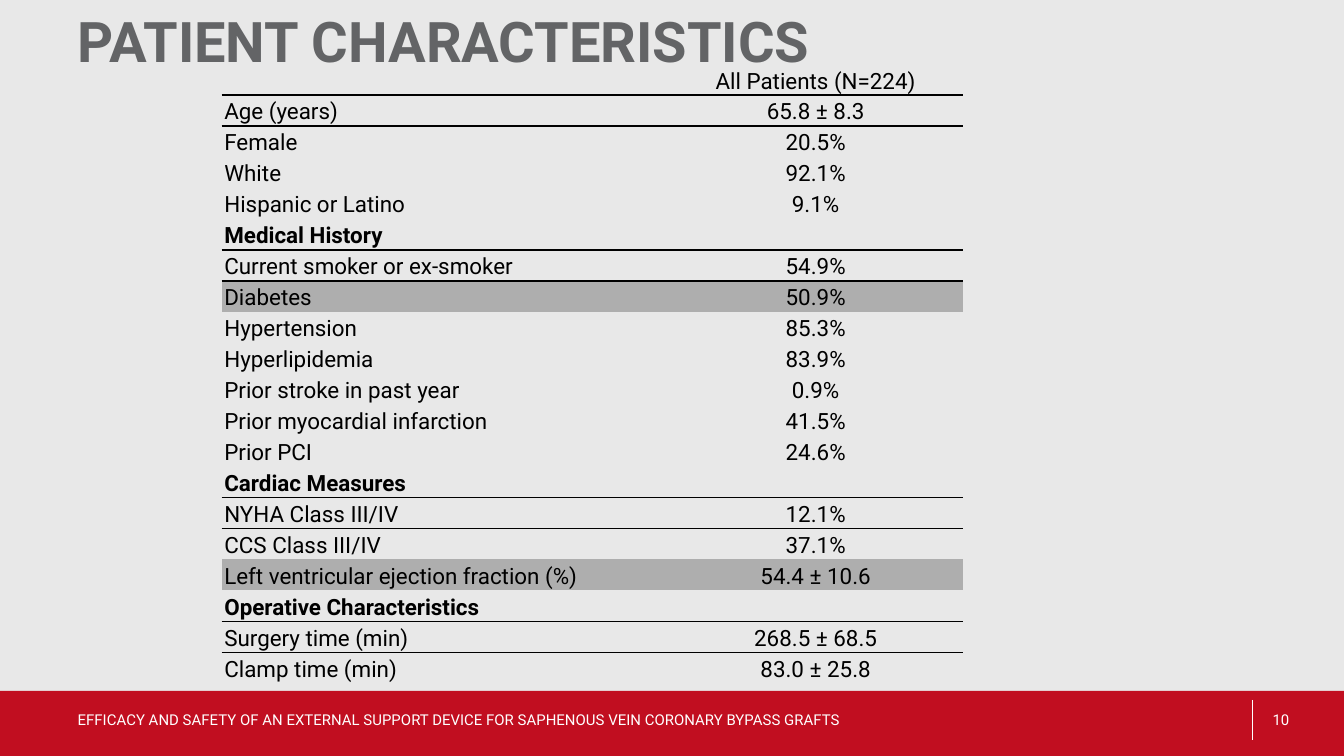
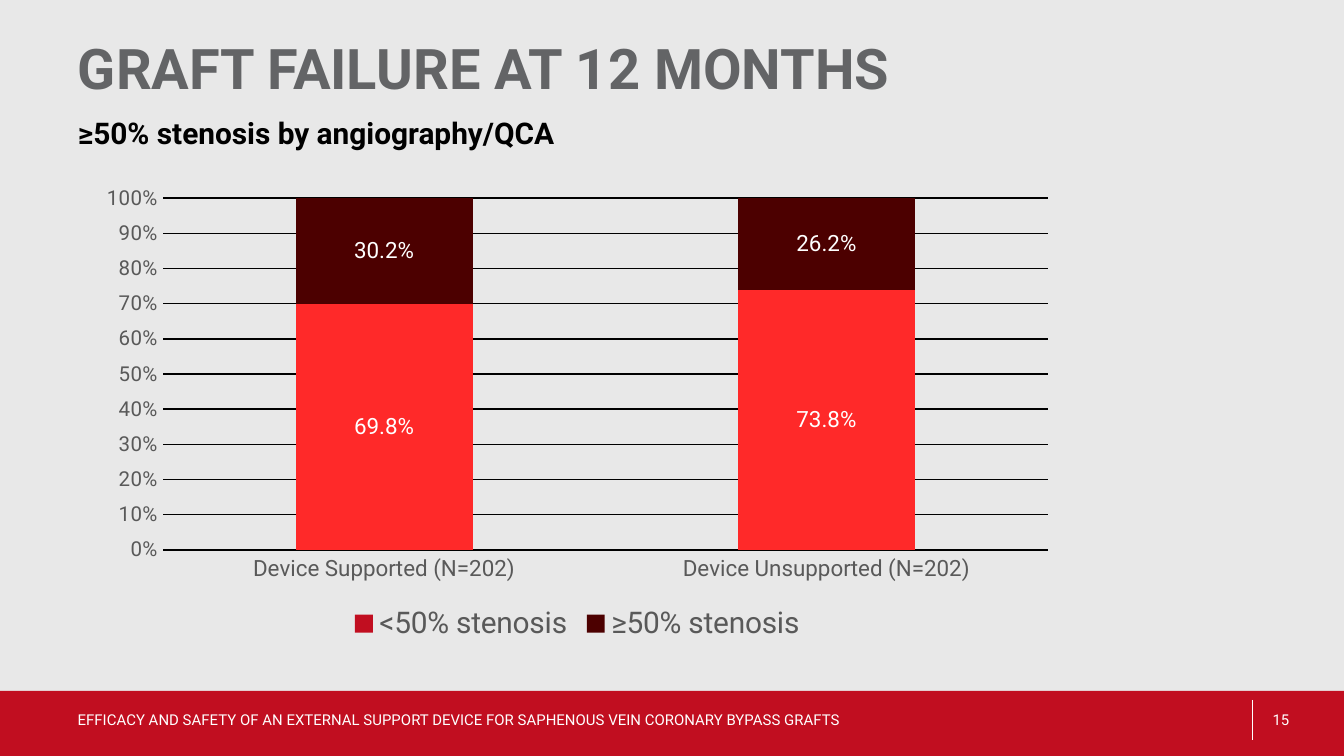
from lxml import etree
from pptx import Presentation
from pptx.chart.data import CategoryChartData
from pptx.dml.color import RGBColor
from pptx.enum.chart import XL_CHART_TYPE as ChartType
from pptx.enum.chart import XL_LEGEND_POSITION as LegendPosition
from pptx.enum.chart import XL_TICK_MARK as TickMark
from pptx.enum.shapes import MSO_CONNECTOR as Connector
from pptx.enum.shapes import MSO_SHAPE as Shape
from pptx.enum.text import MSO_ANCHOR as Anchor
from pptx.enum.text import MSO_AUTO_SIZE as AutoSize
from pptx.enum.text import PP_ALIGN as Align
from pptx.oxml import parse_xml
from pptx.oxml.ns import nsdecls, qn
from pptx.util import Cm, Pt

FONT = "Roboto"
PAPER = RGBColor(0xE8, 0xE8, 0xE8)
RED = RGBColor(0xC1, 0x0E, 0x20)
BRIGHT_RED = RGBColor(0xFF, 0x29, 0x29)
DARK_RED = RGBColor(0x4C, 0x00, 0x00)
TITLE_GRAY = RGBColor(0x63, 0x64, 0x66)
AXIS_GRAY = RGBColor(0x59, 0x59, 0x59)
HIGHLIGHT = RGBColor(0xAE, 0xAE, 0xAE)
BLACK = RGBColor(0, 0, 0)
WHITE = RGBColor(0xFF, 0xFF, 0xFF)

WIDTH, HEIGHT = Cm(25.4), Cm(14.29)
MARGIN = Cm(1.22)
BAND_TOP = Cm(13.06)
FOOTER_TOP, FOOTER_HEIGHT = Cm(13.23), Cm(0.76)
FOOTER = ("EFFICACY AND SAFETY OF AN EXTERNAL SUPPORT DEVICE "
          "FOR SAPHENOUS VEIN CORONARY BYPASS GRAFTS")
NO_TABLE_STYLE = "{2D5ABB26-0587-4C30-8999-92F81FD0307C}"

# A row without a value is a section heading.
PATIENT_ROWS = [
    ("", "All Patients (N=224)"),
    ("Age (years)", "65.8 ± 8.3"),
    ("Female", "20.5%"),
    ("White", "92.1%"),
    ("Hispanic or Latino", "9.1%"),
    ("Medical History", ""),
    ("Current smoker or ex-smoker", "54.9%"),
    ("Diabetes", "50.9%"),
    ("Hypertension", "85.3%"),
    ("Hyperlipidemia", "83.9%"),
    ("Prior stroke in past year", "0.9%"),
    ("Prior myocardial infarction", "41.5%"),
    ("Prior PCI", "24.6%"),
    ("Cardiac Measures", ""),
    ("NYHA Class III/IV", "12.1%"),
    ("CCS Class III/IV", "37.1%"),
    ("Left ventricular ejection fraction (%)", "54.4 ± 10.6"),
    ("Operative Characteristics", ""),
    ("Surgery time (min)", "268.5 ± 68.5"),
    ("Clamp time (min)", "83.0 ± 25.8"),
]
HIGHLIGHTED = {"Diabetes", "Left ventricular ejection fraction (%)"}


def style_font(font, size, color, bold=False):
    font.name = FONT
    font.size = Pt(size)
    font.bold = bold
    font.color.rgb = color


def write(frame, text, size, color, bold=False):
    """Put one formatted paragraph in the frame and return it."""
    frame.text = text
    para = frame.paragraphs[0]
    for span in para.runs:
        style_font(span.font, size, color, bold)
    return para


def place(shape, left, top, width, height):
    shape.left, shape.top, shape.width, shape.height = left, top, width, height


def fill_placeholder(holder, text, top, height, size, color, spacing):
    place(holder, MARGIN, top, Cm(18.97), height)
    frame = holder.text_frame
    frame.word_wrap = True
    frame.auto_size = AutoSize.NONE
    frame.vertical_anchor = Anchor.TOP
    para = write(frame, text, size, color, bold=True)
    para.alignment = Align.LEFT
    para.line_spacing = spacing
    para.space_before = Pt(0)
    return para


def add_footer_text(page, left, width, text):
    box = page.shapes.add_textbox(left, FOOTER_TOP, width, FOOTER_HEIGHT)
    box.text_frame.word_wrap = True
    box.text_frame.vertical_anchor = Anchor.MIDDLE
    write(box.text_frame, text, 8, WHITE)


def add_footer(page, number):
    band = page.shapes.add_shape(Shape.RECTANGLE, 0, BAND_TOP, WIDTH, HEIGHT - BAND_TOP)
    band.shadow.inherit = False
    band.fill.solid()
    band.fill.fore_color.rgb = RED
    band.line.fill.background()

    divider = page.shapes.add_connector(
        Connector.STRAIGHT, Cm(23.67), FOOTER_TOP, Cm(23.67), FOOTER_TOP + FOOTER_HEIGHT)
    divider.line.color.rgb = WHITE
    divider.line.width = Pt(0.5)
    etree.SubElement(divider.element.spPr, qn("a:effectLst"))

    add_footer_text(page, MARGIN, Cm(15.29), FOOTER)
    add_footer_text(page, Cm(23.8), Cm(1.6), str(number))


def add_page(deck, layout, title, title_top, number):
    page = deck.slides.add_slide(deck.slide_layouts[layout])
    add_footer(page, number)
    fill_placeholder(page.shapes.title, title, title_top, Cm(2.57), 30, TITLE_GRAY, Pt(30))
    return page


def add_border(cell, edge):
    """Draw a black 1 pt line on an edge; call for lnB before lnT."""
    cell._tc.get_or_add_tcPr().insert(0, parse_xml(
        f'<a:{edge} {nsdecls("a")} w="12700"><a:solidFill><a:srgbClr val="{BLACK}"/>'
        f'</a:solidFill></a:{edge}>'))


def fill_cell(cell, text, align, bold, highlighted):
    cell.margin_left = cell.margin_right = Cm(0.05)
    cell.margin_top = cell.margin_bottom = 0
    para = write(cell.text_frame, text, 12, BLACK, bold)
    para.alignment = align
    para.line_spacing = 1.15
    para.space_before = Pt(0)
    para.space_after = Pt(3)
    if not text:
        etree.SubElement(para._p, qn("a:endParaRPr"), sz="1200")
    if highlighted:
        cell.fill.solid()
        cell.fill.fore_color.rgb = HIGHLIGHT
    else:
        cell.fill.background()


def add_patient_table(page):
    header_height, row_height = Cm(0.66), Cm(0.57)
    widths = [Cm(8.44), Cm(5.57)]
    count = len(PATIENT_ROWS)
    table = page.shapes.add_table(
        count, 2, Cm(4.19), Cm(1.14), sum(widths),
        header_height + row_height * (count - 1)).table
    table.first_row = table.horz_banding = False
    table._tbl.tblPr.find(qn("a:tableStyleId")).text = NO_TABLE_STYLE
    for column, width in zip(table.columns, widths):
        column.width = width

    after_heading = False
    for index, (label, value) in enumerate(PATIENT_ROWS):
        table.rows[index].height = row_height if index else header_height
        heading = not (label and value)
        for column, (text, align) in enumerate([(label, Align.LEFT), (value, Align.CENTER)]):
            cell = table.cell(index, column)
            fill_cell(cell, text, align, heading and index > 0, label in HIGHLIGHTED)
            if index == 0:
                cell.vertical_anchor = Anchor.BOTTOM
            if heading or after_heading:
                add_border(cell, "lnB")
            if after_heading:
                add_border(cell, "lnT")
        after_heading = heading


def style_axis(axis, size):
    axis.major_tick_mark = axis.minor_tick_mark = TickMark.NONE
    axis.format.line.fill.background()
    style_font(axis.tick_labels.font, size, AXIS_GRAY)


def paint(part, color):
    part.format.fill.solid()
    part.format.fill.fore_color.rgb = color


def add_failure_chart(page):
    data = CategoryChartData(number_format="0.0%")
    data.categories = ["Device Supported (N=202)", "Device Unsupported (N=202)"]
    data.add_series("<50% stenosis", (0.698, 0.738))
    data.add_series("≥50% stenosis", (0.302, 0.262))
    chart = page.shapes.add_chart(
        ChartType.COLUMN_STACKED_100, Cm(1.65), Cm(3.33), Cm(18.52), Cm(8.89), data).chart
    chart.has_title = False
    style_font(chart.font, 10, BLACK)

    chart.has_legend = True
    chart.legend.position = LegendPosition.BOTTOM
    chart.legend.include_in_layout = False
    style_font(chart.legend.font, 16, AXIS_GRAY)

    style_axis(chart.category_axis, 12)
    values = chart.value_axis
    style_axis(values, 11)
    values.minimum_scale, values.maximum_scale, values.major_unit = 0, 1, 0.1
    values.tick_labels.number_format = "0%"
    values.tick_labels.number_format_is_linked = False
    values.has_major_gridlines = True
    values.major_gridlines.format.line.color.rgb = BLACK
    values.major_gridlines.format.line.width = Pt(0.75)

    plot = chart.plots[0]
    plot.gap_width, plot.overlap = 150, 100
    plot.vary_by_categories = False
    for series, color in zip(plot.series, (RED, DARK_RED)):
        paint(series, color)
        labels = series.data_labels
        labels.show_value = True
        labels.number_format = "0.0%"
        labels.number_format_is_linked = False
        style_font(labels.font, 12, WHITE)
    for index in range(2):
        paint(plot.series[0].points[index], BRIGHT_RED)


def add_subtitle(page, text):
    para = fill_placeholder(page.placeholders[1], text, Cm(2.11), Cm(0.89), 16, BLACK, 0.9)
    properties = para._p.get_or_add_pPr()
    properties.set("marL", "0")
    properties.set("indent", "0")
    etree.SubElement(properties, qn("a:buNone"))


def main():
    deck = Presentation()
    deck.slide_width, deck.slide_height = WIDTH, HEIGHT
    background = deck.slide_master.background.fill
    background.solid()
    background.fore_color.rgb = PAPER

    page = add_page(deck, 5, "PATIENT CHARACTERISTICS", Cm(0.2), 10)
    add_patient_table(page)

    page = add_page(deck, 1, "GRAFT FAILURE AT 12 MONTHS", Cm(0.71), 15)
    add_subtitle(page, "≥50% stenosis by angiography/QCA")
    add_failure_chart(page)

    deck.save("out.pptx")


if __name__ == "__main__":
    main()
